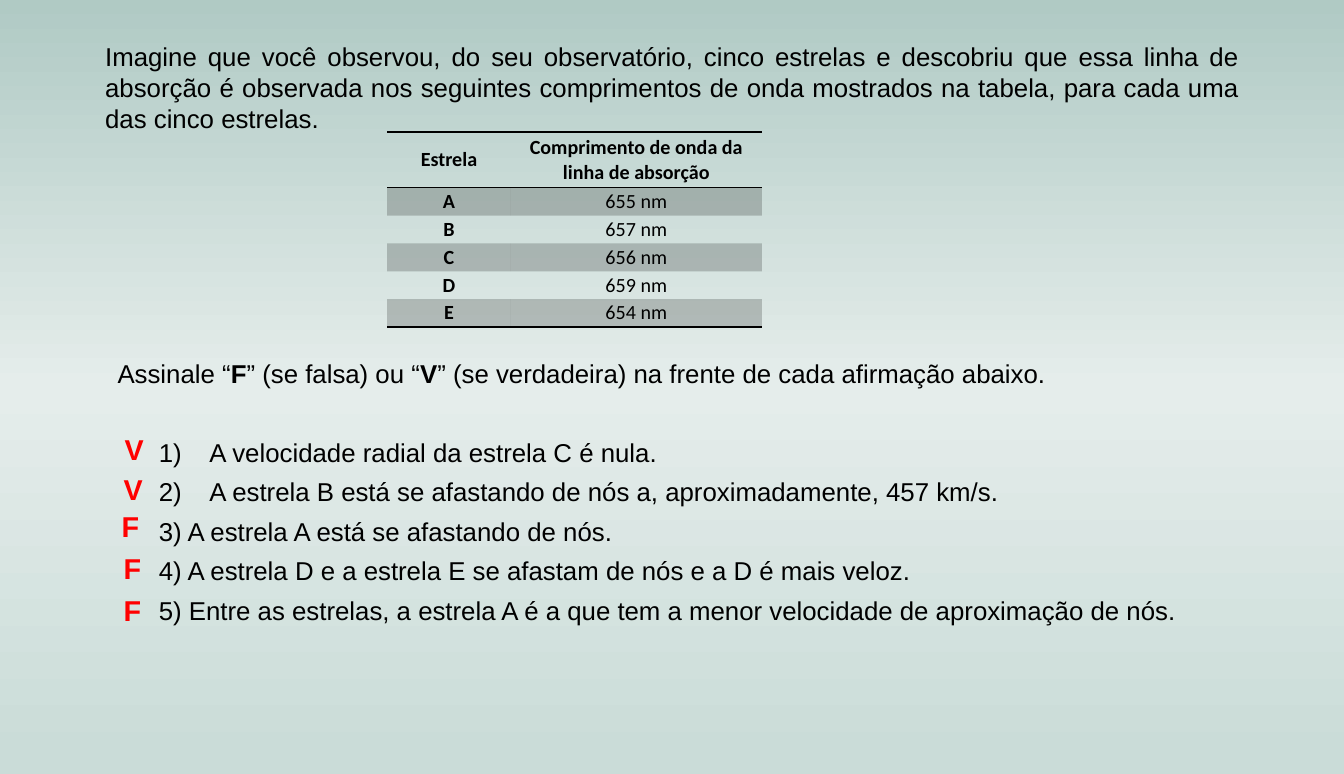
import copy

import pptx
import pptx.dml.color
import pptx.enum.text
import pptx.oxml
import pptx.util
from pptx.util import Inches

NS = 'xmlns:a="http://schemas.openxmlformats.org/drawingml/2006/main"'
ALIGN = pptx.enum.text.PP_ALIGN
BLACK, RED = "000000", "FF0000"
PLAIN_STYLE = "{2D5ABB26-0587-4C30-8999-92F81FD0307C}"

SKY = [(0, "B0CAC4"), (0.5, "E5EDEB"), (0.98, "CADCD8")]
INTRO = ("Imagine que você observou, do seu observatório, cinco estrelas e descobriu que essa "
         "linha de absorção é observada nos seguintes comprimentos de onda mostrados na tabela, "
         "para cada uma das cinco estrelas.")
STARS = [("Estrela", "Comprimento de onda da linha de absorção"),
         ("A", "655 nm"), ("B", "657 nm"), ("C", "656 nm"), ("D", "659 nm"), ("E", "654 nm")]
INSTRUCTION = [("Assinale “", False), ("F", True), ("” (se falsa) ou “", False), ("V", True),
               ("” (se verdadeira) na frente de cada afirmação abaixo.", False)]
NUMBERED = ["A velocidade radial da estrela C é nula.",
            "A estrela B está se afastando de nós a, aproximadamente, 457 km/s."]
TYPED = ["3) A estrela A está se afastando de nós.",
         "4) A estrela D e a estrela E se afastam de nós e a D é mais veloz.",
         "5) Entre as estrelas, a estrela A é a que tem a menor velocidade de aproximação de nós."]
ANSWERS = [("V", 1.11, 4.14, 0.39), ("V", 1.1, 4.52, 0.39), ("F", 1.08, 4.88, 0.37),
           ("F", 1.1, 5.29, 0.37), ("F", 1.1, 5.7, 0.37)]


def color(hex_value):
    return pptx.dml.color.RGBColor.from_string(hex_value)


def apply(target, values):
    for name, value in values.items():
        setattr(target, name, value)


def add_xml(parent, xml):
    parent.append(pptx.oxml.parse_xml(xml))


def write(paragraph, runs, size, font="Arial", ink=BLACK, **layout):
    apply(paragraph, layout)
    for text, bold in runs:
        run = paragraph.add_run()
        run.text = text
        apply(run.font, {"name": font, "size": pptx.util.Pt(size), "bold": bold})
        run.font.color.rgb = color(ink)


def add_text_frame(slide, left, top, width, height, wrap=True):
    box = slide.shapes.add_textbox(Inches(left), Inches(top), Inches(width), Inches(height))
    apply(box.text_frame, {"word_wrap": wrap,
                           "auto_size": pptx.enum.text.MSO_AUTO_SIZE.SHAPE_TO_FIT_TEXT})
    return box.text_frame


def paint_background(slide):
    fill = slide.background.fill
    fill.gradient()
    fill.gradient_angle = 270
    stop_list = slide.element.xpath(".//a:gsLst")[0]
    stop_list.append(copy.deepcopy(stop_list[-1]))
    for stop, (position, hex_value) in zip(fill.gradient_stops, SKY):
        stop.position = position
        stop.color.rgb = color(hex_value)


def style_cell(cell, borders, shaded):
    apply(cell, {"margin_left": Inches(0.07), "margin_right": Inches(0.07),
                 "margin_top": 0, "margin_bottom": 0,
                 "vertical_anchor": pptx.enum.text.MSO_ANCHOR.MIDDLE})
    properties = cell._tc.get_or_add_tcPr()
    for side in borders:
        add_xml(properties, f'<a:ln{side} {NS} w="12700"><a:solidFill><a:srgbClr val="{BLACK}"/>'
                            f'</a:solidFill></a:ln{side}>')
    if shaded:
        cell.fill.solid()
        cell.fill.fore_color.rgb = color(BLACK)
        add_xml(properties.xpath("./a:solidFill/a:srgbClr")[0], f'<a:alpha {NS} val="20000"/>')
    else:
        cell.fill.background()


def add_star_table(slide):
    table = slide.shapes.add_table(len(STARS), 2, Inches(3.75), Inches(1.28),
                                   Inches(3.63), Inches(1.89)).table
    apply(table, {"first_row": False, "horz_banding": False})
    table._tbl.xpath("./a:tblPr/a:tableStyleId")[0].text = PLAIN_STYLE
    for column, width in zip(table.columns, (1.2, 2.43)):
        column.width = Inches(width)
    borders = {0: "TB", len(STARS) - 1: "B"}
    for r, star in enumerate(STARS):
        table.rows[r].height = Inches(0.27 if r else 0.54)
        for c, text in enumerate(star):
            cell = table.cell(r, c)
            style_cell(cell, borders.get(r, ""), shaded=r % 2 == 1)
            write(cell.text_frame.paragraphs[0], [(text, r == 0 or c == 0)], 14, "Calibri",
                  alignment=ALIGN.CENTER)


def add_statements(slide, body):
    frame = add_text_frame(slide, 1.04, 3.42, 10.95, 2.73)
    write(frame.paragraphs[0], INSTRUCTION, 18, **body)
    for index, statement in enumerate(NUMBERED + TYPED):
        paragraph = frame.add_paragraph()
        properties = paragraph._p.get_or_add_pPr()
        properties.set("marL", str(Inches(0.89)))
        properties.set("indent", str(Inches(-0.49)))
        if statement in NUMBERED:
            add_xml(properties, f'<a:buFont {NS} typeface="+mj-lt"/>')
            add_xml(properties, f'<a:buAutoNum {NS} type="arabicParenR"/>')
        gap = pptx.util.Pt(0 if index else 27)
        write(paragraph, [(statement, False)], 18, space_before=gap, **body)


def main():
    deck = pptx.Presentation()
    apply(deck, {"slide_width": Inches(13.02), "slide_height": Inches(7.5)})
    slide = deck.slides.add_slide(deck.slide_layouts[6])
    paint_background(slide)
    body = {"alignment": ALIGN.JUSTIFY, "space_after": pptx.util.Pt(6)}

    # Introduction and measured wavelengths
    intro = add_text_frame(slide, 0.92, 0.35, 11.18, 1.01)
    write(intro.paragraphs[0], [(INTRO, False)], 18, **body)
    add_star_table(slide)

    # Statements and their answers
    add_statements(slide, body)
    for letter, left, top, width in ANSWERS:
        answer = add_text_frame(slide, left, top, width, 0.44, wrap=False)
        write(answer.paragraphs[0], [(letter, True)], 20, ink=RED)

    deck.save("out.pptx")


if __name__ == "__main__":
    main()
